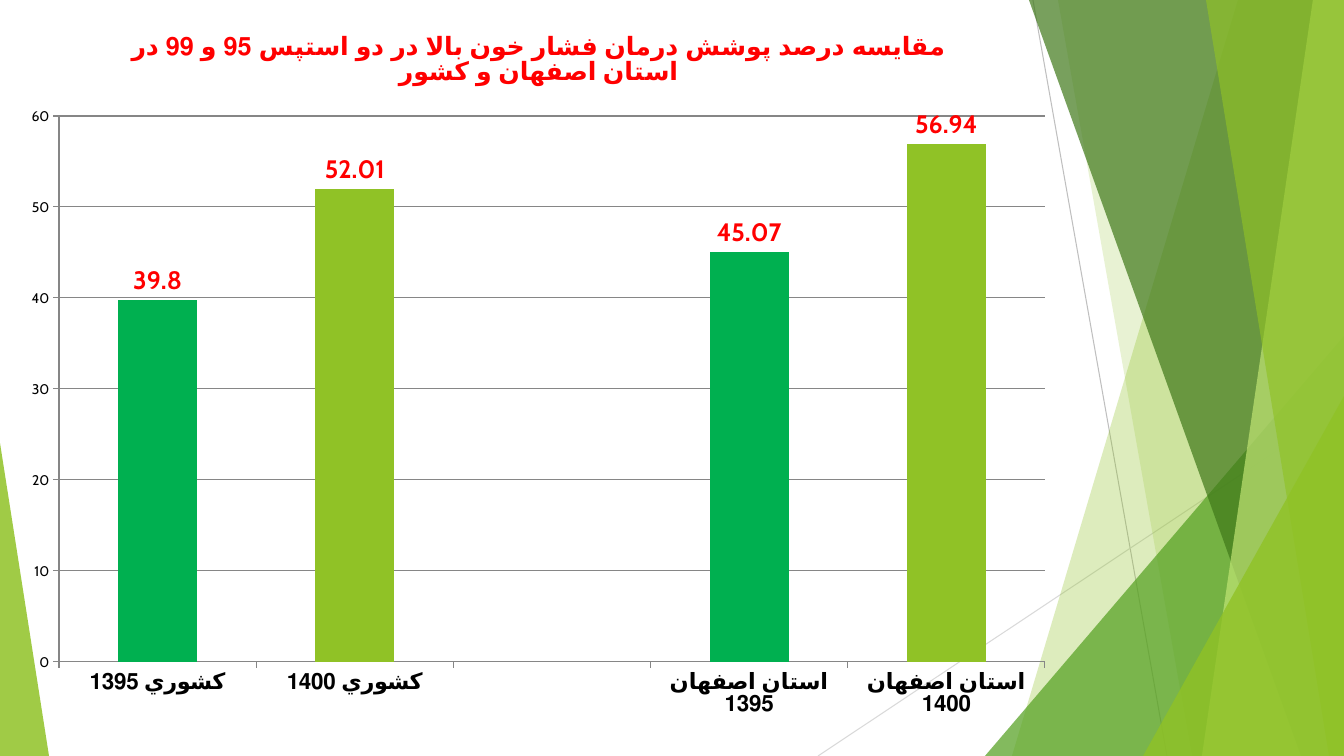
from lxml import etree
from pptx import Presentation
from pptx.chart.data import CategoryChartData
from pptx.dml.color import RGBColor
from pptx.enum.chart import XL_CHART_TYPE, XL_LABEL_POSITION, XL_TICK_MARK
from pptx.enum.shapes import MSO_CONNECTOR, MSO_SHAPE
from pptx.oxml import parse_xml
from pptx.oxml.ns import nsdecls, qn
from pptx.util import Pt

PX = 914400 / 100.8
W, H = 1344, 756

LIME = RGBColor(0x90, 0xC2, 0x26)
PALE_LIME = RGBColor(0xC0, 0xE4, 0x74)
GREEN = RGBColor(0x54, 0xA0, 0x21)
DARK_GREEN = RGBColor(0x3F, 0x78, 0x19)
EMERALD = RGBColor(0x00, 0xB0, 0x50)
RED = RGBColor(0xFF, 0x00, 0x00)
BLACK = RGBColor(0x00, 0x00, 0x00)
GRID_GRAY = RGBColor(0x86, 0x86, 0x86)
GRAY = RGBColor(0xBF, 0xBF, 0xBF)
LIGHT_GRAY = RGBColor(0xD9, 0xD9, 0xD9)
FONT = "Cabin"


def px(n):
    return round(n * PX)


def set_font(font, **values):
    font.color.rgb = values.pop("color")
    for name, value in values.items():
        setattr(font, name, value)


prs = Presentation()
prs.slide_width, prs.slide_height = px(W), px(H)
s = prs.slides.add_slide(prs.slide_layouts[6])

# Thin lines behind the facets
for x1, y1, x2, y2, color in (
    (1033, 0, 1167, H, GRAY),
    (W, 406, 818, H, LIGHT_GRAY),
):
    line = s.shapes.add_connector(MSO_CONNECTOR.STRAIGHT, px(x1), px(y1), px(x2), px(y2))
    line.line.color.rgb = color
    line.line.width = Pt(0.75)
    etree.SubElement(line._element.spPr, qn("a:effectLst"))

# Facets, back to front: a band has its top-left and bottom-left x,
# a triangle has left, top, width and the place of its apex
facets = [
    ("band", (1238, 1012), LIME, 30),
    ("band", (1058, 1192), LIME, 20),
    ("triangle", (985, 336, 359, 1), GREEN, 72),
    ("band", (1029, 1301), DARK_GREEN, 70),
    ("band", (1313, 1202), PALE_LIME, 70),
    ("band", (1206, 1329), LIME, 65),
    ("triangle", (1143, 396, 201, 1), LIME, 80),
    ("triangle", (0, 443, 49, 0), LIME, 85),
]
for kind, place, color, opacity in facets:
    if kind == "band":
        top_x, bottom_x = place
        outline = s.shapes.build_freeform(top_x, 0, scale=PX)
        outline.add_line_segments([(W, 0), (W, H), (bottom_x, H)], close=True)
        facet = outline.convert_to_shape()
    else:
        left, top, width, apex = place
        facet = s.shapes.add_shape(
            MSO_SHAPE.ISOSCELES_TRIANGLE, px(left), px(top), px(width), px(H - top))
        facet.adjustments[0] = apex
    facet.shadow.inherit = False
    facet.line.fill.background()
    facet.fill.solid()
    facet.fill.fore_color.rgb = color
    clr = facet._element.spPr.find(qn("a:solidFill")).find(qn("a:srgbClr"))
    etree.SubElement(clr, qn("a:alpha"), val=str(opacity * 1000))

# Column chart
TITLE = "مقايسه درصد پوشش درمان فشار خون بالا در دو استپس 95 و 99 در استان اصفهان و کشور"
data = CategoryChartData()
data.categories = ["كشوري 1395", "كشوري 1400", "", "استان اصفهان 1395", "استان اصفهان 1400"]
data.add_series(TITLE, [39.8, 52.01, None, 45.07, 56.94])

left, top, width, height = 11, 8, 1055, 723
chart = s.shapes.add_chart(
    XL_CHART_TYPE.COLUMN_CLUSTERED, px(left), px(top), px(width), px(height), data).chart
set_font(chart.font, size=Pt(10), name=FONT, color=BLACK)
chart.has_legend = False

chart.has_title = True
p = chart.chart_title.text_frame.paragraphs[0]
p._p.get_or_add_pPr().set("rtl", "1")
r = p.add_run()
r.text = TITLE
set_font(r.font, size=Pt(18), bold=True, name=FONT, color=RED)
chart.chart_title.include_in_layout = False

plot = chart.plots[0]
plot.gap_width = 150
plot.vary_by_categories = False
bars = plot.series[0]
bars.format.fill.solid()
bars.format.fill.fore_color.rgb = LIME
for i in (0, 3):
    fill = bars.points[i].format.fill
    fill.solid()
    fill.fore_color.rgb = EMERALD

labels = bars.data_labels
labels.show_value = True
labels.position = XL_LABEL_POSITION.OUTSIDE_END
set_font(labels.font, size=Pt(18), bold=True, name=FONT, color=RED)

cat_axis, val_axis = chart.category_axis, chart.value_axis
for axis in (cat_axis, val_axis):
    axis.major_tick_mark = XL_TICK_MARK.OUTSIDE
    axis.format.line.color.rgb = GRID_GRAY
    axis.format.line.width = Pt(0.75)
set_font(cat_axis.tick_labels.font, size=Pt(16), bold=True, name=FONT, color=BLACK)
val_axis.minimum_scale, val_axis.maximum_scale, val_axis.major_unit = 0, 60, 10
val_axis.has_major_gridlines = True
val_axis.major_gridlines.format.line.color.rgb = GRID_GRAY
val_axis.major_gridlines.format.line.width = Pt(0.75)

# Inner plot area, as fractions of the chart
area = {"x": (59 - left) / width, "y": (116 - top) / height, "w": 986 / width, "h": 546 / height}
sizes = "".join(f'<c:{k} val="{v:.4f}"/>' for k, v in area.items())
layout = parse_xml(
    f'<c:layout {nsdecls("c")}><c:manualLayout><c:layoutTarget val="inner"/>'
    f'<c:xMode val="edge"/><c:yMode val="edge"/>{sizes}</c:manualLayout></c:layout>')
plot_area = chart._chartSpace.chart.plotArea
for old in plot_area.findall(qn("c:layout")):
    plot_area.remove(old)
plot_area.insert(0, layout)

prs.save("out.pptx")
